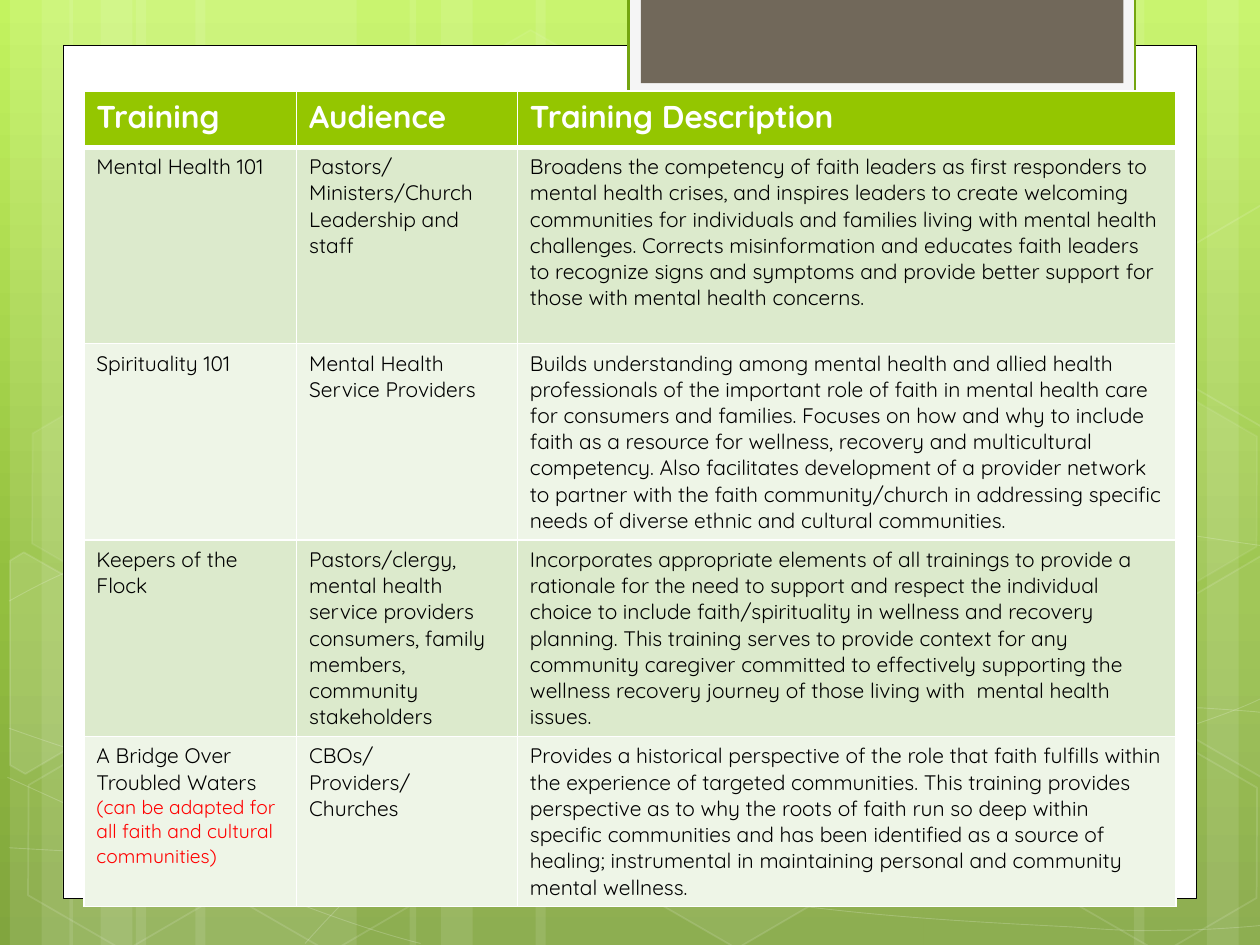
"""Build a slide with a table of faith and mental health trainings on a green backdrop."""
import math
import lxml.etree
import pptx
import pptx.dml.color
import pptx.enum.shapes
import pptx.oxml.ns
import pptx.util

Cm, Pt = pptx.util.Cm, pptx.util.Pt
Kind = pptx.enum.shapes.MSO_SHAPE
qn = pptx.oxml.ns.qn

THEME = {
    "font": "Quicksand", "head": 18, "body": 12, "note": 11,
    "white": "FFFFFF", "black": "000000", "red": "FF0000",
    "green": "94C600", "bands": ("DCEACC", "EEF5E7"),
    "sky": ((0, "C3F35F"), (0.62, "93BF3F"), (1, "81A53E")),
    "frame": "F5F5F5", "edge": "74A510", "tab": "71685A",
}

HEADS = ["Training", "Audience", "Training Description"]
ROWS = [
    ("Mental Health 101",
     "Pastors/\nMinisters/Church Leadership and staff",
     "Broadens the competency of faith leaders as first responders to mental health crises, "
     "and inspires leaders to create welcoming communities for individuals and families living "
     "with mental health challenges. Corrects misinformation and educates faith leaders to "
     "recognize signs and symptoms and provide better support for those with mental health "
     "concerns."),
    ("Spirituality 101",
     "Mental Health Service Providers",
     "Builds understanding among mental health and allied health professionals of the important "
     "role of faith in mental health care for consumers and families. Focuses on how and why to "
     "include faith as a resource for wellness, recovery and multicultural competency. Also "
     "facilitates development of a provider network to partner with the faith community/church "
     "in addressing specific needs of diverse ethnic and cultural communities."),
    ("Keepers of the Flock",
     "Pastors/clergy, mental health service providers consumers, family members, community "
     "stakeholders",
     "Incorporates appropriate elements of all trainings to provide a rationale for the need to "
     "support and respect the individual choice to include faith/spirituality in wellness and "
     "recovery planning. This training serves to provide context for any community caregiver "
     "committed to effectively supporting the wellness recovery journey of those living with  "
     "mental health issues."),
    ("A Bridge Over Troubled Waters\n(can be adapted for all faith and cultural communities)",
     "CBOs/\nProviders/\nChurches",
     "Provides a historical perspective of the role that faith fulfills within the experience of "
     "targeted communities. This training provides perspective as to why the roots of faith run "
     "so deep within specific communities and has been identified as a source of healing; "
     "instrumental in maintaining personal and community mental wellness."),
]
COLS = (4.29, 4.45, 13.28)
HIGHS = (1.14, 3.96, 3.96, 3.96, 3.43)

STRIPES = [
    (2.74, 4.45), (0.2, 1.27), (0.84, 2.11), (3.94, 4.45), (1.4, 1.27), (2.03, 2.11),
    (18.62, 4.45), (24.33, 1.27), (22.86, 2.11), (10.8, 7.82), (8.26, 1.27), (8.89, 2.11),
]
BEND = (24.21, 14.27)
CURVES = [
    [(0.18, 17.09), (1.55, 17.17), (2.92, 17.25), (4.83, 17.22), (6.73, 17.2), (9.09, 17.15),
     (11.63, 16.89), (14.17, 16.64), (17.78, 16.15), (20.12, 15.67), (22.43, 15.19),
     (24.82, 14.43), (25.58, 14)],
    [(0.18, 12.12), (0.91, 11.71), (1.65, 11.33), (3.07, 10.95), (4.52, 10.57), (6.58, 10.01),
     (8.81, 9.83), (11.07, 9.65), (13.82, 9.63), (16.61, 9.83), (19.41, 10.03), (24.05, 10.82),
     (25.58, 11.02)],
    [(0.15, 15.67), (3.23, 17.07), (6.27, 18.47), (8.48, 19.02)],
    [(0.18, 14.68), (0.97, 14.96), (1.78, 15.24), (3.25, 15.65), (4.72, 16.03), (6.93, 16.66),
     (9.07, 17.09), (11.18, 17.53), (13.84, 17.98), (15.95, 18.24), (18.06, 18.52),
     (20.32, 18.62), (21.67, 18.69), (22.99, 18.8), (23.34, 18.75), (24, 18.75),
     (24.66, 18.72), (25.12, 18.69), (25.58, 18.64)],
    [(6.15, 19.02), (6.6, 18.52), (7.06, 18.01), (7.67, 17.55), (8.28, 17.09), (9.14, 16.59),
     (9.86, 16.23), (10.57, 15.88), (11, 15.72), (11.94, 15.47), (12.85, 15.22),
     (14.55, 14.86), (15.44, 14.68), (16.36, 14.5), (16.48, 14.5), (17.27, 14.45),
     (18.06, 14.38), (19.3, 14.3), (20.17, 14.27), (21.06, 14.25), (22.5, 14.27),
     (22.5, 14.27), BEND, BEND, BEND, (24.66, 14.3), (25.1, 14.33), (25.32, 14.35),
     (25.55, 14.38), (25.48, 14.35), (25.55, 14.38)],
]
HEXES = [
    (8.48, 0.91, 4, 8), (12.62, 14.96, 6, 12), (0.28, 15.01, 0, 12), (0.36, 7.92, 7, 8),
    (4.42, 15.04, 0, 12), (19.13, 11.51, 10, 12), (21.18, 15.06, 0, 12), (21.18, 7.98, 7, 8),
]
LEFT = [(0.2, 11.3), (0.48, 11.13), (2.44, 12.24), (2.41, 14.48), (0.51, 15.6), (0.2, 15.42)]
RIGHT = [(23.52, 12.32), (25.43, 11.2), (25.63, 11.33), (25.63, 15.57), (25.45, 15.67),
         (23.52, 14.55)]
CUTS = [(LEFT, (0.91, 13.59), 10), (RIGHT, (25.02, 13.21), 4),
        ([(x, y - 7.07) for x, y in RIGHT], (25.02, 6.14), 0)]
TURN = 30
PANELS = [
    ((1.27, 0.91, 22.86, 17.2), "white", "black", 0.5),
    ((12.67, -0.05, 10.21, 1.92), "frame", "edge", 1.25),
    ((12.92, -0.05, 9.73, 1.73), "tab", None, 0),
]


def tint(name):
    return pptx.dml.color.RGBColor.from_string(THEME[name])


def fade(shape, route, share):
    color = shape.element.spPr.find(route + "/" + qn("a:srgbClr"))
    lxml.etree.SubElement(color, qn("a:alpha")).set("val", str(share * 1000))


def paint(shape, fill=None, line=None, width=0, clear=100, faint=100):
    shape.shadow.inherit = False
    if fill and clear:
        shape.fill.solid()
        shape.fill.fore_color.rgb = tint(fill)
        if clear < 100:
            fade(shape, qn("a:solidFill"), clear)
    else:
        shape.fill.background()
    if line:
        shape.line.color.rgb = tint(line)
        shape.line.width = Pt(width)
        if faint < 100:
            fade(shape, qn("a:ln") + "/" + qn("a:solidFill"), faint)
    else:
        shape.line.fill.background()


def outline(shapes, points, close):
    spots = [(Cm(x), Cm(y)) for x, y in points]
    pen = shapes.build_freeform(*spots[0])
    pen.add_line_segments(spots[1:], close=close)
    return pen.convert_to_shape()


def curve(shapes, knots):
    shape = outline(shapes, knots, False)
    lines = list(shape.element.iter(qn("a:lnTo")))
    for i in range(0, len(lines), 3):
        trio = lines[i:i + 3]
        if len(set(knots[i + 1:i + 4])) > 1:
            bend = lxml.etree.Element(qn("a:cubicBezTo"))
            trio[0].addprevious(bend)
            bend.extend([line[0] for line in trio])
            trio.append(trio[0])
        for line in set(trio[:2] if len(trio) == 3 else trio):
            line.getparent().remove(line)
    return shape


def level(points, mid):
    cos, sin = math.cos(math.radians(TURN)), math.sin(math.radians(TURN))
    gaps = [(x - mid[0], y - mid[1]) for x, y in points]
    return [(mid[0] + x * cos + y * sin, mid[1] - x * sin + y * cos) for x, y in gaps]


def backdrop(slide):
    fill = slide.background.fill
    fill.gradient()
    fill.gradient_angle = 270
    stops = slide.element.find(".//" + qn("a:gsLst"))
    for stop in list(stops):
        stops.remove(stop)
    for place, color in THEME["sky"]:
        stop = lxml.etree.SubElement(stops, qn("a:gs"), pos=str(int(place * 100000)))
        lxml.etree.SubElement(stop, qn("a:srgbClr"), val=color)
    shapes = slide.shapes
    for x, wide in STRIPES:
        paint(shapes.add_shape(Kind.RECTANGLE, Cm(x), 0, Cm(wide), Cm(19.05)), "white", clear=10)
    for knots in CURVES:
        paint(curve(shapes, knots), line="white", width=0.5, faint=20)
    for x, y, clear, faint in HEXES:
        hexa = shapes.add_shape(Kind.HEXAGON, Cm(x), Cm(y), Cm(4.45), Cm(3.86))
        hexa.adjustments[0] = 0.285
        hexa.rotation = TURN
        paint(hexa, "white", "white", 1, clear, faint)
    for points, mid, clear in CUTS:
        cut = outline(shapes, level(points, mid), True)
        cut.rotation = TURN
        paint(cut, "white", "white", 1, clear, 12)
    for box, fill, line, width in PANELS:
        paint(shapes.add_shape(Kind.RECTANGLE, *map(Cm, box)), fill, line, width)


def border(cell, row):
    props = cell._tc.get_or_add_tcPr()
    for i, side in enumerate("LRTB"):
        thick = (row, side) in ((0, "B"), (1, "T"))
        line = lxml.etree.Element(qn("a:ln" + side), w=str(Pt(3 if thick else 1)))
        solid = lxml.etree.SubElement(line, qn("a:solidFill"))
        lxml.etree.SubElement(solid, qn("a:srgbClr"), val=THEME["white"])
        props.insert(i, line)


def style(cell, row):
    cell.fill.solid()
    shade = THEME["bands"][(row - 1) % 2] if row else THEME["green"]
    cell.fill.fore_color.rgb = pptx.dml.color.RGBColor.from_string(shade)
    border(cell, row)
    for para in cell.text_frame.paragraphs:
        note = para.text.startswith("(")
        size, color = ("note", "red") if note else ("body", "black") if row else ("head", "white")
        for run in para.runs:
            run.font.name = THEME["font"]
            run.font.size = Pt(THEME[size])
            run.font.bold = row == 0
            run.font.color.rgb = tint(color)


def grid(slide):
    data = [HEADS, *ROWS]
    table = slide.shapes.add_table(len(data), len(COLS), Cm(1.69), Cm(1.83),
                                   Cm(sum(COLS)), Cm(sum(HIGHS))).table
    for col, wide in zip(table.columns, COLS):
        col.width = Cm(wide)
    for r, (texts, high) in enumerate(zip(data, HIGHS)):
        table.rows[r].height = Cm(high)
        for c, text in enumerate(texts):
            cell = table.cell(r, c)
            cell.text_frame.text = text
            style(cell, r)


def main():
    deck = pptx.Presentation()
    deck.slide_width, deck.slide_height = Cm(25.4), Cm(19.05)
    slide = deck.slides.add_slide(deck.slide_layouts[6])
    backdrop(slide)
    grid(slide)
    deck.save("out.pptx")


if __name__ == "__main__":
    main()
